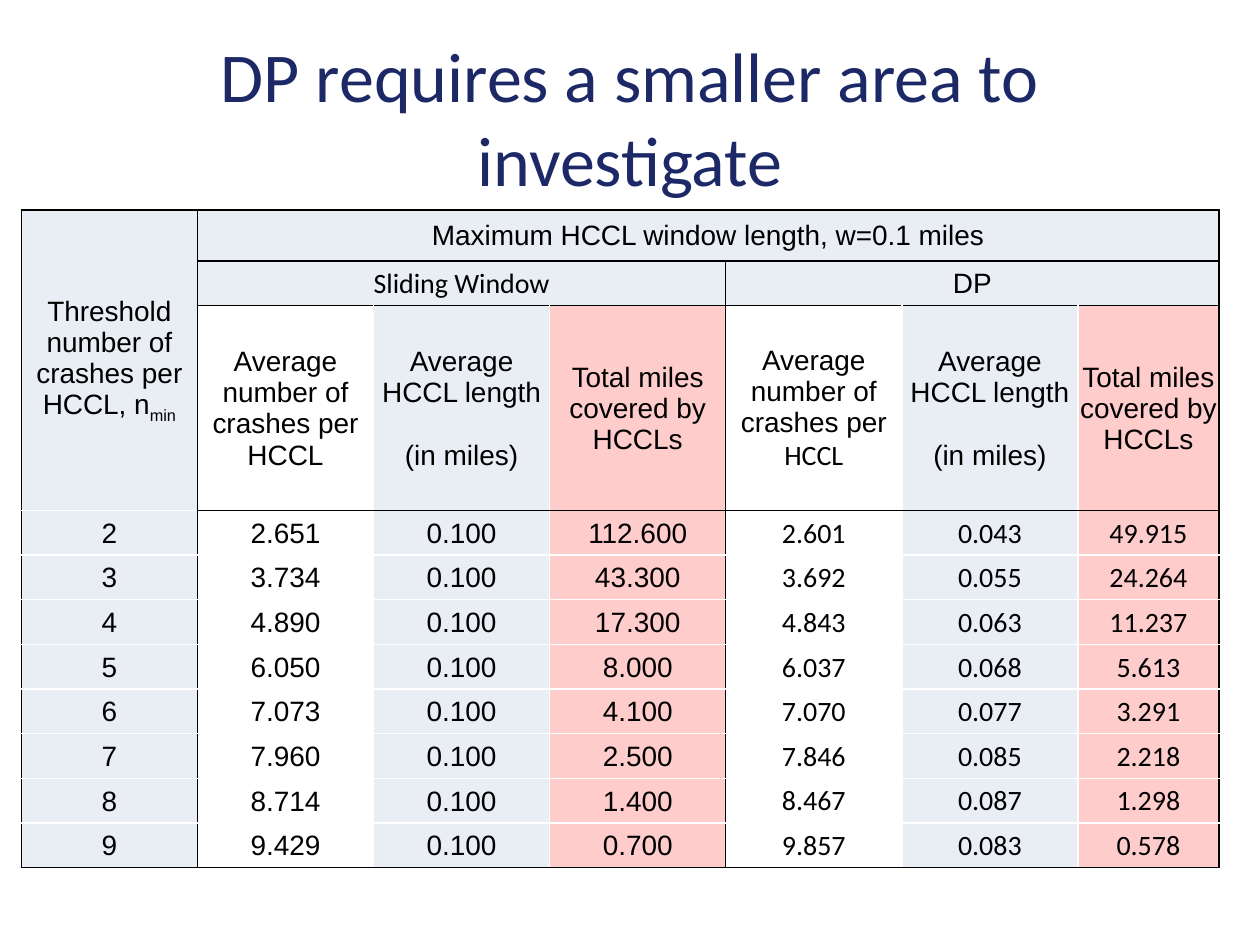
"""Build a slide comparing sliding-window and DP crash locations in a table."""
from lxml import etree
from pptx import Presentation
from pptx.dml.color import RGBColor
from pptx.enum import text
from pptx.oxml import ns
from pptx import util as u

THEME = {
    "title": "1C2966", "ink": "000000", "rule": "000000", "gap": "FFFFFF",
    "plain": "FFFFFF", "tint": "E9EDF4", "accent": "FFCCCC",
    "sans": "Arial", "alt": "Calibri", "title_size": 40, "size": 16, "para_gap": 18,
}

TITLE = "DP requires a smaller area to investigate"
CALIBRI = {"font": THEME["alt"]}
CRASHES = "Average number of crashes per "
LENGTH = ["Average HCCL length", "(in miles)"]
MILES = ["Total miles covered by HCCLs"]

# row, column, row span, column span, paragraphs
SPANNING = [
    (0, 0, 3, 1, [[("Threshold number of crashes per HCCL, n", {}), ("min", {"baseline": -25000})]]),
    (0, 1, 1, 6, ["Maximum HCCL window length, w=0.1 miles"]),
    (1, 1, 1, 3, [[("Sliding Window", CALIBRI)]]),
    (1, 4, 1, 3, ["DP"]),
]
HEADINGS = [[CRASHES + "HCCL"], LENGTH, MILES, [[(CRASHES, {}), ("HCCL", CALIBRI)]], LENGTH, MILES]
VALUES = [
    ("2", "2.651", "0.100", "112.600", "2.601", "0.043", "49.915"),
    ("3", "3.734", "0.100", "43.300", "3.692", "0.055", "24.264"),
    ("4", "4.890", "0.100", "17.300", "4.843", "0.063", "11.237"),
    ("5", "6.050", "0.100", "8.000", "6.037", "0.068", "5.613"),
    ("6", "7.073", "0.100", "4.100", "7.070", "0.077", "3.291"),
    ("7", "7.960", "0.100", "2.500", "7.846", "0.085", "2.218"),
    ("8", "8.714", "0.100", "1.400", "8.467", "0.087", "1.298"),
    ("9", "9.429", "0.100", "0.700", "9.857", "0.083", "0.578"),
]
FILLS = ["tint", "plain", "tint", "accent", "plain", "tint", "accent"]
COL_WIDTHS = [3.55] * 6 + [2.84]
ROW_HEIGHTS = [1.03, 0.9, 4.13] + [0.9] * len(VALUES)
HEAD_ROWS = 3


def write(tf, paragraphs, font=THEME["sans"], size=THEME["size"], color=THEME["ink"]):
    for i, runs in enumerate(paragraphs):
        p = tf.add_paragraph() if i else tf.paragraphs[0]
        p.alignment = text.PP_ALIGN.CENTER
        if i:
            p.space_before = u.Pt(THEME["para_gap"])
        for words, style in [(runs, {})] if isinstance(runs, str) else runs:
            r = p.add_run()
            r.text = words
            r.font.name = style.get("font", font)
            r.font.size = u.Pt(size)
            r.font.color.rgb = RGBColor.from_string(color)
            if "baseline" in style:
                r._r.get_or_add_rPr().set("baseline", str(style["baseline"]))


def set_border(cell, side, black):
    ln = etree.SubElement(cell._tc.get_or_add_tcPr(), ns.qn(f"a:ln{side}"), w=str(u.Pt(1)))
    fill = etree.SubElement(ln, ns.qn("a:solidFill"))
    etree.SubElement(fill, ns.qn("a:srgbClr"), val=THEME["rule" if black else "gap"])


def format_cell(cell, row, col):
    right, bottom = col + cell.span_width, row + cell.span_height

    def vertical(x):
        return x in (0, 1, len(COL_WIDTHS)) or (x == 4 and row > 0)

    def horizontal(y):
        return y in (0, len(ROW_HEIGHTS)) or (col > 0 and y <= HEAD_ROWS)

    for side, black in (("L", vertical(col)), ("R", vertical(right)),
                        ("T", horizontal(row)), ("B", horizontal(bottom))):
        set_border(cell, side, black)
    cell.fill.solid()
    fill = FILLS[col] if row >= HEAD_ROWS - 1 else "tint"
    cell.fill.fore_color.rgb = RGBColor.from_string(THEME[fill])
    cell.vertical_anchor = text.MSO_ANCHOR.MIDDLE
    cell.margin_left = cell.margin_right = cell.margin_top = u.Cm(0.03)
    cell.margin_bottom = 0


def add_title(s):
    sp = s.shapes.add_textbox(u.Cm(1.27), u.Cm(0.76), u.Cm(22.86), u.Cm(3.18))
    tf = sp.text_frame
    tf.word_wrap = True
    tf.vertical_anchor = text.MSO_ANCHOR.MIDDLE
    write(tf, [TITLE], THEME["alt"], THEME["title_size"], THEME["title"])


def add_results(s):
    sp = s.shapes.add_table(len(ROW_HEIGHTS), len(COL_WIDTHS), u.Cm(0.43), u.Cm(4.23),
                            u.Cm(sum(COL_WIDTHS)), u.Cm(sum(ROW_HEIGHTS)))
    tbl = sp.table
    tbl.first_row = tbl.horz_banding = False
    for column, width in zip(tbl.columns, COL_WIDTHS):
        column.width = u.Cm(width)
    for line, height in zip(tbl.rows, ROW_HEIGHTS):
        line.height = u.Cm(height)
    for row, col, down, across, paragraphs in SPANNING:
        cell = tbl.cell(row, col)
        cell.merge(tbl.cell(row + down - 1, col + across - 1))
        write(cell.text_frame, paragraphs)
    for col, paragraphs in enumerate(HEADINGS, 1):
        write(tbl.cell(HEAD_ROWS - 1, col).text_frame, paragraphs)
    for row, values in enumerate(VALUES, HEAD_ROWS):
        for col, value in enumerate(values):
            write(tbl.cell(row, col).text_frame, [value], THEME["alt" if col >= 4 else "sans"])
    for row in range(len(ROW_HEIGHTS)):
        for col in range(len(COL_WIDTHS)):
            format_cell(tbl.cell(row, col), row, col)


def main():
    prs = Presentation()
    prs.slide_width, prs.slide_height = u.Cm(25.4), u.Cm(19.05)
    s = prs.slides.add_slide(prs.slide_layouts[6])
    add_title(s)
    add_results(s)
    prs.save("out.pptx")


if __name__ == "__main__":
    main()
